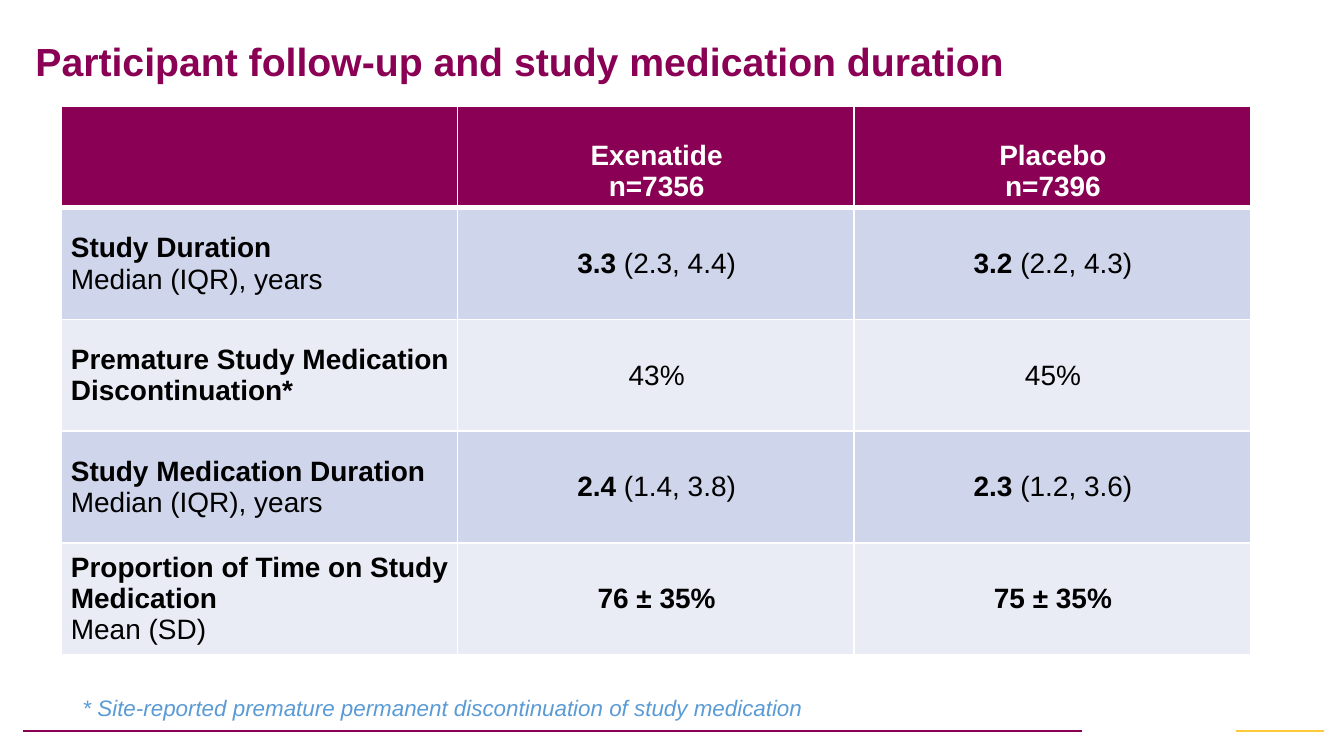
from dataclasses import dataclass

from lxml.etree import SubElement
from pptx import Presentation
from pptx.dml.color import RGBColor
from pptx.enum.shapes import MSO_CONNECTOR as Connector
from pptx.enum.text import MSO_ANCHOR as Anchor, PP_ALIGN as Align
from pptx.oxml import parse_xml
from pptx.oxml.ns import nsdecls, qn
from pptx.util import Cm, Pt

PLUM, GOLD, BLUE = "8A0054", "FFCA38", "5B9BD5"
WHITE, BLACK = "FFFFFF", "000000"
BANDS = ("CFD5EA", "E9EBF5")
MARGINS = {"margin_left": Cm(0.18), "margin_right": Cm(0.15),
           "margin_top": Cm(0.1), "margin_bottom": Cm(0.1)}


@dataclass(frozen=True)
class Run:
    text: str
    bold: bool = False


@dataclass(frozen=True)
class TextBox:
    text: str
    left: float
    top: float
    width: float
    height: float
    size: float
    color: str
    bold: bool = False
    italic: bool = False
    anchor: Anchor = Anchor.TOP
    line_spacing: float = 1.0


@dataclass(frozen=True)
class Rule:
    start: float
    end: float
    color: str


@dataclass(frozen=True)
class Measure:
    label: list[list[Run]]
    exenatide: list[Run]
    placebo: list[Run]


def bold(text: str) -> Run:
    return Run(text, True)


def rgb(color: str) -> RGBColor:
    return RGBColor.from_string(color)


def apply(target, values: dict) -> None:
    for name, value in values.items():
        setattr(target, name, value)


def style_font(font, size: float, color: str, **values) -> None:
    apply(font, {"name": "Arial", "size": Pt(size), **values})
    font.color.rgb = rgb(color)


def add_text(slide, box: TextBox) -> None:
    area = map(Cm, (box.left, box.top, box.width, box.height))
    frame = slide.shapes.add_textbox(*area).text_frame
    apply(frame, {**MARGINS, "word_wrap": True, "vertical_anchor": box.anchor})
    paragraph = frame.paragraphs[0]
    paragraph.line_spacing = box.line_spacing
    run = paragraph.add_run()
    run.text = box.text
    style_font(run.font, box.size, box.color, bold=box.bold, italic=box.italic)


def add_rule(slide, rule: Rule) -> None:
    y = Cm(13.82)
    line = slide.shapes.add_connector(
        Connector.STRAIGHT, Cm(rule.start), y, Cm(rule.end), y)
    line.line.color.rgb = rgb(rule.color)
    line.line.width = Pt(1)
    SubElement(line._element.spPr, qn("a:effectLst"))


def set_borders(cell, top: float, bottom: float) -> None:
    """Draw white cell borders; top and bottom widths are in points."""
    properties = cell._tc.get_or_add_tcPr()
    widths = {"lnL": 1, "lnR": 1, "lnT": top, "lnB": bottom}
    for index, (side, width) in enumerate(widths.items()):
        properties.insert(index, parse_xml(
            f'<a:{side} {nsdecls("a")} w="{Pt(width)}"><a:solidFill>'
            f'<a:srgbClr val="{WHITE}"/></a:solidFill></a:{side}>'))


def fill_cell(cell, lines: list[list[Run]], fill: str, color: str,
              align: Align, anchor: Anchor) -> None:
    cell.fill.solid()
    cell.fill.fore_color.rgb = rgb(fill)
    apply(cell, {**MARGINS, "vertical_anchor": anchor})
    for index, line in enumerate(lines):
        frame = cell.text_frame
        paragraph = frame.add_paragraph() if index else frame.paragraphs[0]
        paragraph.alignment = align
        for part in line:
            run = paragraph.add_run()
            run.text = part.text
            style_font(run.font, 15, color, bold=part.bold)


def add_results(slide, arms: list[list[list[Run]]], measures: list[Measure]) -> None:
    column, header, row_height = 7.49, 1.93, 2.11
    table = slide.shapes.add_table(
        len(measures) + 1, 3, Cm(1.16), Cm(2), Cm(3 * column),
        Cm(header + len(measures) * row_height)).table
    apply(table, {"first_row": False, "horz_banding": False})
    for col in table.columns:
        col.width = Cm(column)
    for index, row in enumerate(table.rows):
        row.height = Cm(row_height if index else header)

    for col, lines in enumerate(arms):
        cell = table.cell(0, col)
        fill_cell(cell, lines, PLUM, WHITE, Align.CENTER, Anchor.BOTTOM)
        set_borders(cell, 1, 3)
    for row, measure in enumerate(measures, 1):
        contents = (measure.label, [measure.exenatide], [measure.placebo])
        for col, lines in enumerate(contents):
            cell = table.cell(row, col)
            fill_cell(cell, lines, BANDS[(row - 1) % 2], BLACK,
                      Align.CENTER if col else Align.LEFT, Anchor.MIDDLE)
            set_borders(cell, 3 if row == 1 else 1, 1)


TITLE = TextBox("Participant follow-up and study medication duration",
                0.49, 0.46, 21.9, 1.5, 21, PLUM, bold=True,
                anchor=Anchor.MIDDLE, line_spacing=0.9)
FOOTNOTE = TextBox(
    "* Site-reported premature permanent discontinuation of study medication",
    1.38, 13.03, 20.57, 0.71, 12, BLUE, italic=True)
RULES = [Rule(0.44, 20.45, PLUM), Rule(23.35, 25.02, GOLD)]
ARMS = [
    [],
    [[bold("Exenatide")], [bold("n=7356")]],
    [[bold("Placebo")], [bold("n=7396")]],
]
MEDIAN = [Run("Median (IQR), years")]
MEASURES = [
    Measure([[bold("Study Duration")], MEDIAN],
            [bold("3.3"), Run(" (2.3, 4.4)")],
            [bold("3.2"), Run(" (2.2, 4.3)")]),
    Measure([[bold("Premature Study Medication Discontinuation*")]],
            [Run("43%")], [Run("45%")]),
    Measure([[bold("Study Medication Duration")], MEDIAN],
            [bold("2.4"), Run(" (1.4, 3.8)")],
            [bold("2.3"), Run(" (1.2, 3.6)")]),
    Measure([[bold("Proportion of Time on Study Medication")], [Run("Mean (SD)")]],
            [bold("76 ± 35%")], [bold("75 ± 35%")]),
]


def main() -> None:
    deck = Presentation()
    apply(deck, {"slide_width": Cm(25.4), "slide_height": Cm(14.29)})
    slide = deck.slides.add_slide(deck.slide_layouts[6])
    for rule in RULES:
        add_rule(slide, rule)
    add_text(slide, TITLE)
    add_results(slide, ARMS, MEASURES)
    add_text(slide, FOOTNOTE)
    deck.save("out.pptx")


if __name__ == "__main__":
    main()
